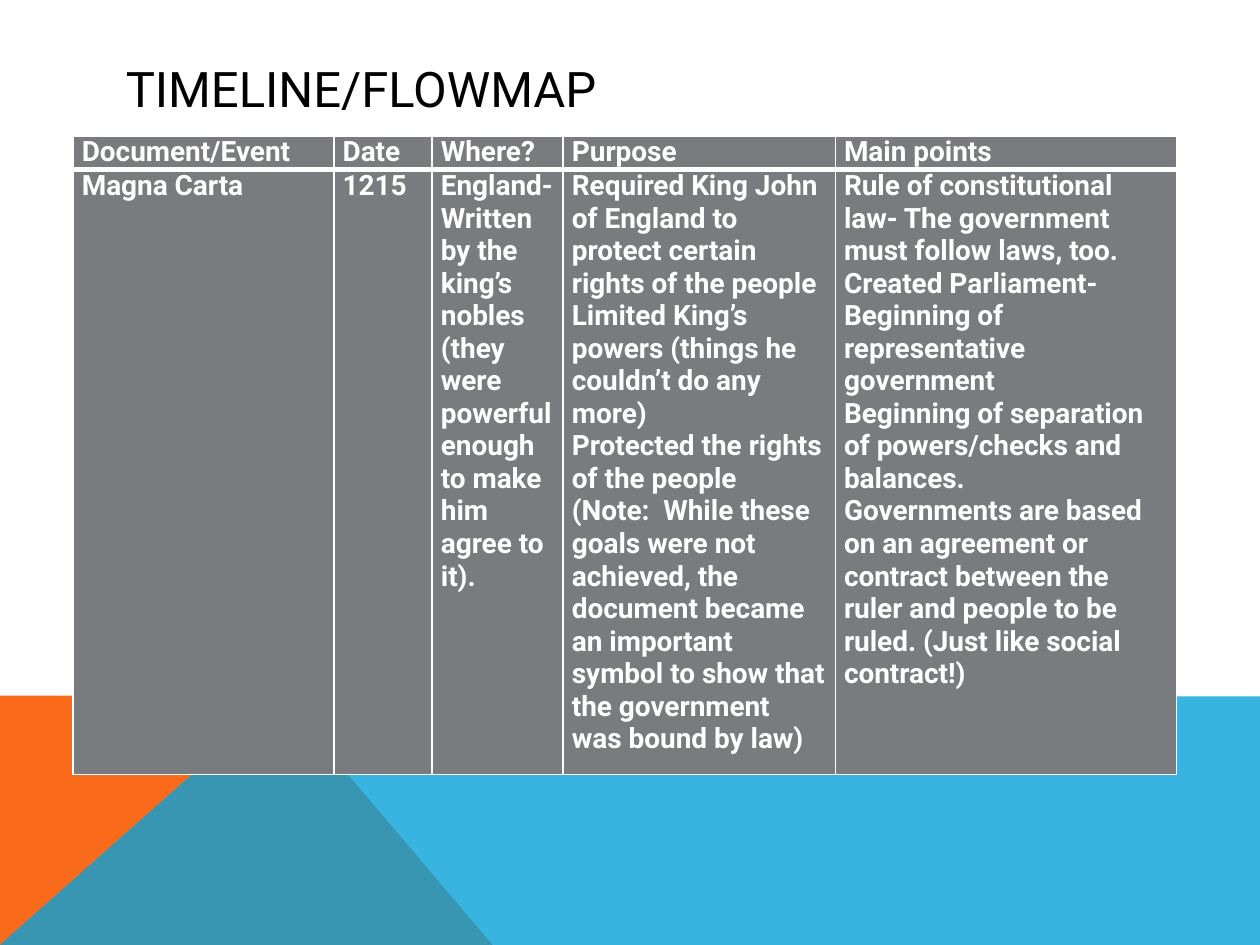
import dataclasses
import typing

import lxml.etree
import pptx
import pptx.dml.color
import pptx.enum.text
import pptx.oxml
import pptx.oxml.ns
import pptx.util


@dataclasses.dataclass(frozen=True)
class Theme:
    """Colours, typeface and type sizes of the slide."""
    font: str = "Roboto"
    title_size: int = 28
    table_size: int = 16
    thin_rule: int = 1
    thick_rule: int = 3
    black: str = "000000"
    white: str = "FFFFFF"
    grey: str = "797B7E"
    orange: str = "F96A1B"
    blue: str = "08A1D9"


@dataclasses.dataclass(frozen=True)
class Band:
    """A coloured polygon with corners in percent of the slide."""
    corners: tuple[tuple[float, float], ...]
    colour: str
    opacity: int = 100


class Column(typing.NamedTuple):
    """A table column with its width in percent of the slide."""
    width: float
    heading: str
    paragraphs: tuple[str, ...]


THEME = Theme()
WIDTH, HEIGHT = pptx.util.Inches(10), pptx.util.Inches(7.5)
TABLE_LEFT, TABLE_TOP = 5.8, 14.4
ROW_HEIGHTS = (3.45, 62.1)
BANDS = (
    Band(((0, 100), (0, 73.6), (22.3, 73.6), (39.1, 100)), THEME.orange),
    Band(((0, 100), (22.3, 73.6), (100, 73.7), (100, 100)), THEME.blue, 80),
)
COLUMNS = (
    Column(20.7, "Document/Event", ("Magna Carta",)),
    Column(7.8, "Date", ("1215",)),
    Column(10.4, "Where?", (
        "England- Written by the king’s nobles (they were powerful enough to make him agree to it).",
    )),
    Column(21.6, "Purpose", (
        "Required King John of England to protect certain rights of the people",
        "Limited King’s powers (things he couldn’t do any more)",
        "Protected the rights of the people",
        "(Note:  While these goals were not achieved, the document became an important "
        "symbol to show that the government was bound by law)",
    )),
    Column(27.1, "Main points", (
        "Rule of constitutional law- The government must follow laws, too.",
        "Created Parliament-Beginning of representative government",
        "Beginning of separation of powers/checks and balances.",
        "Governments are based on an agreement or contract between the ruler and people "
        "to be ruled. (Just like social contract!)",
    )),
)


def across(percent: float) -> int:
    """Return a share of the slide width."""
    return round(WIDTH * percent / 100)


def down(percent: float) -> int:
    """Return a share of the slide height."""
    return round(HEIGHT * percent / 100)


def apply(target: typing.Any, values: dict[str, typing.Any]) -> None:
    """Set each named format value on the target."""
    for name, value in values.items():
        setattr(target, name, value)


def paint(fill: typing.Any, colour: str) -> None:
    """Make a fill solid in the given colour."""
    fill.solid()
    fill.fore_color.rgb = pptx.dml.color.RGBColor.from_string(colour)


def write(frame: typing.Any, paragraphs: tuple[str, ...], size: int, colour: str, bold: bool) -> None:
    """Fill a text frame with evenly styled paragraphs."""
    for index, text in enumerate(paragraphs):
        para = frame.add_paragraph() if index else frame.paragraphs[0]
        para.alignment = pptx.enum.text.PP_ALIGN.LEFT
        span = para.add_run()
        span.text = text
        apply(span.font, {"name": THEME.font, "size": pptx.util.Pt(size), "bold": bold})
        span.font.color.rgb = pptx.dml.color.RGBColor.from_string(colour)


def draw_band(page: typing.Any, band: Band) -> None:
    """Draw one polygon of the footer."""
    first, *rest = [(across(x), down(y)) for x, y in band.corners]
    builder = page.shapes.build_freeform(*first)
    builder.add_line_segments(rest, close=True)
    shape = builder.convert_to_shape()
    shape.shadow.inherit = False
    shape.line.fill.background()
    paint(shape.fill, band.colour)
    if band.opacity < 100:
        colour = shape.fill._xPr.find(".//" + pptx.oxml.ns.qn("a:srgbClr"))
        lxml.etree.SubElement(colour, pptx.oxml.ns.qn("a:alpha"), val=str(band.opacity * 1000))


def draw_title(page: typing.Any, text: str) -> None:
    """Draw the slide heading."""
    box = page.shapes.add_textbox(across(9), down(5.3), across(82.2), down(8))
    apply(box.text_frame, {"word_wrap": True, "vertical_anchor": pptx.enum.text.MSO_ANCHOR.MIDDLE})
    write(box.text_frame, (text,), THEME.title_size, THEME.black, False)


def rule_cell(cell: typing.Any, widths: dict[str, int]) -> None:
    """Give a cell white borders of the given point widths."""
    properties = cell._tc.get_or_add_tcPr()
    for index, (side, width) in enumerate(widths.items()):
        line = pptx.oxml.parse_xml(
            f'<a:{side} {pptx.oxml.ns.nsdecls("a")} w="{pptx.util.Pt(width)}"><a:solidFill>'
            f'<a:srgbClr val="{THEME.white}"/></a:solidFill></a:{side}>'
        )
        properties.insert(index, line)


def draw_table(page: typing.Any, columns: tuple[Column, ...]) -> None:
    """Draw the table of documents and events."""
    table = page.shapes.add_table(
        len(ROW_HEIGHTS), len(columns), across(TABLE_LEFT), down(TABLE_TOP),
        across(sum(column.width for column in columns)), down(sum(ROW_HEIGHTS)),
    ).table
    apply(table, {"first_row": False, "horz_banding": False})
    for row, height in zip(table.rows, ROW_HEIGHTS):
        row.height = down(height)
    side_inset = across(0.7)
    insets = {"margin_left": side_inset, "margin_right": side_inset, "margin_top": 0, "margin_bottom": 0}
    thin, thick = THEME.thin_rule, THEME.thick_rule
    for position, column in enumerate(columns):
        table.columns[position].width = across(column.width)
        for row, paragraphs in enumerate(((column.heading,), column.paragraphs)):
            cell = table.cell(row, position)
            apply(cell, insets)
            paint(cell.fill, THEME.grey)
            top, bottom = (thick, thin) if row else (thin, thick)
            rule_cell(cell, {"lnL": thin, "lnR": thin, "lnT": top, "lnB": bottom})
            write(cell.text_frame, paragraphs, THEME.table_size, THEME.white, True)


def main() -> None:
    """Build and save the deck."""
    deck = pptx.Presentation()
    apply(deck, {"slide_width": WIDTH, "slide_height": HEIGHT})
    page = deck.slides.add_slide(deck.slide_layouts[6])
    for band in BANDS:
        draw_band(page, band)
    draw_title(page, "TIMELINE/FLOWMAP")
    draw_table(page, COLUMNS)
    deck.save("out.pptx")


if __name__ == "__main__":
    main()
